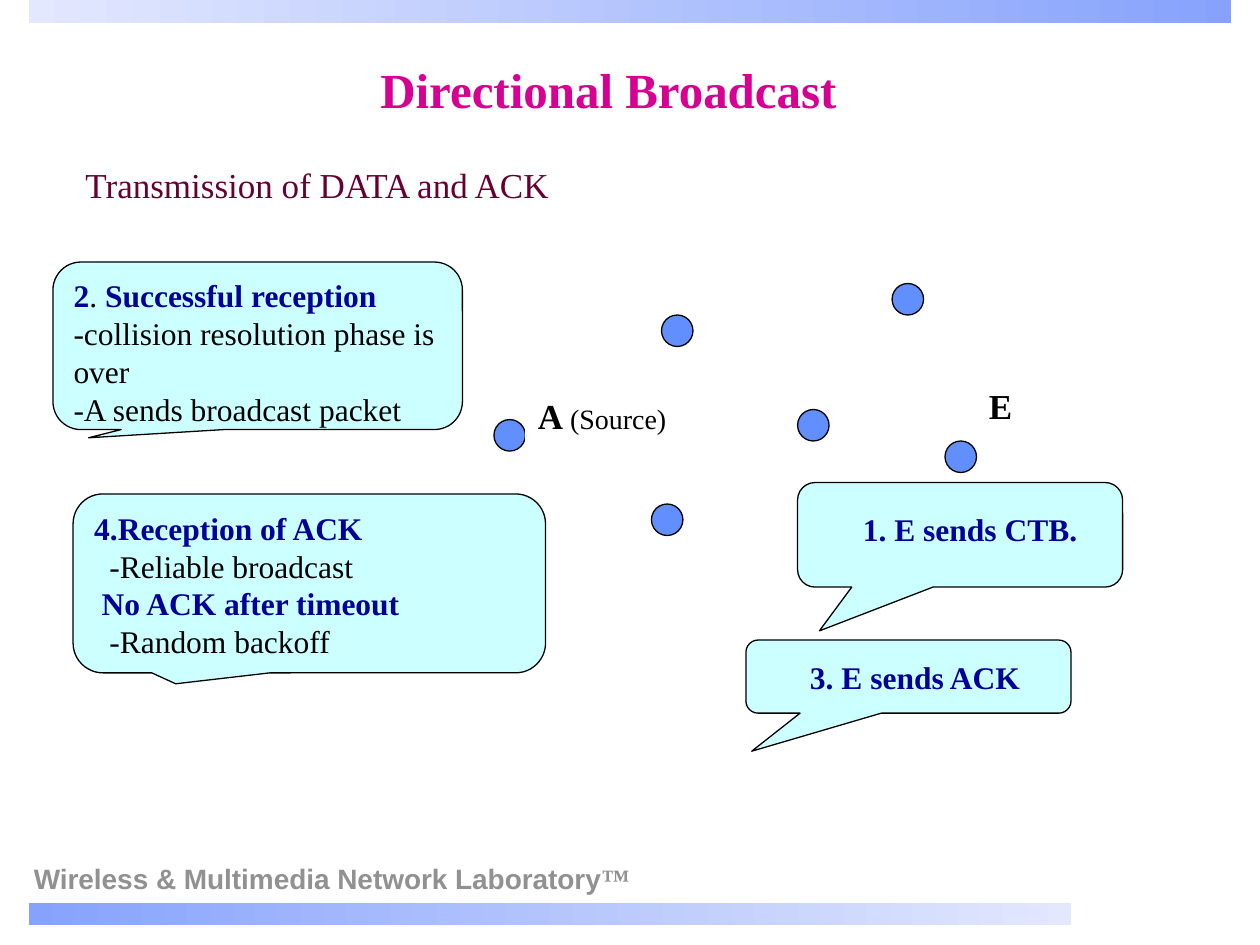
import pptx
import pptx.util
from pptx.dml.color import RGBColor
from pptx.enum.shapes import MSO_SHAPE
from pptx.enum.text import MSO_ANCHOR, MSO_AUTO_SIZE, PP_ALIGN
from pptx.util import Inches

BLACK = RGBColor(0x00, 0x00, 0x00)
WHITE = RGBColor(0xFF, 0xFF, 0xFF)
MAGENTA = RGBColor(0xD6, 0x00, 0x93)
MAROON = RGBColor(0x66, 0x00, 0x33)
NAVY = RGBColor(0x00, 0x00, 0x99)
GRAY = RGBColor(0x91, 0x91, 0x91)
CYAN = RGBColor(0xCC, 0xFF, 0xFF)
NODE_BLUE = RGBColor(0x61, 0x8F, 0xFD)
BAR_BLUE = RGBColor(0x86, 0xA2, 0xFC)
BAR_PALE = RGBColor(0xE3, 0xE8, 0xFE)

SERIF = "Times New Roman"
HEAD = {"name": SERIF, "size": 18, "bold": True, "color": NAVY}
BODY = {**HEAD, "bold": False, "color": BLACK}
NODE_NAME = {**HEAD, "size": 20, "color": BLACK}
TITLE = {**HEAD, "size": 28, "color": MAGENTA}
SUBTITLE = {**BODY, "size": 20, "color": MAROON}
FOOTER = {**HEAD, "name": "Arial", "size": 16, "color": GRAY}
NODE_SIZE = 0.25


class SlideBuilder:
    def __init__(self, slide):
        self.slide = slide

    def shape(self, kind, box, fill=None, line=BLACK):
        shape = self.slide.shapes.add_shape(kind, *map(Inches, box))
        shape.shadow.inherit = False
        if fill is None:
            shape.fill.background()
        else:
            shape.fill.solid()
            shape.fill.fore_color.rgb = fill
        shape.line.color.rgb = line
        shape.line.width = pptx.util.Pt(0.75)
        return shape

    def bar(self, box, colors):
        bar = self.shape(MSO_SHAPE.RECTANGLE, box)
        bar.line.fill.background()
        bar.fill.gradient()
        bar.fill.gradient_angle = 0
        for stop, color in zip(bar.fill.gradient_stops, colors):
            stop.color.rgb = color

    def node(self, left, top):
        self.shape(MSO_SHAPE.OVAL, (left, top, NODE_SIZE, NODE_SIZE), NODE_BLUE)

    def callout(self, box, tip, lines=()):
        callout = self.shape(MSO_SHAPE.ROUNDED_RECTANGULAR_CALLOUT, box, CYAN)
        for index, value in enumerate((*tip, 0.167)):
            callout.adjustments[index] = value
        self.fill_text(callout.text_frame, lines)

    def text(self, box, *runs, spacing=None):
        frame = self.slide.shapes.add_textbox(*map(Inches, box)).text_frame
        self.fill_text(frame, [(0, runs)], spacing)
        frame.auto_size = MSO_AUTO_SIZE.SHAPE_TO_FIT_TEXT

    def node_label(self, box, *runs):
        label = self.shape(MSO_SHAPE.RECTANGLE, box, line=WHITE)
        self.fill_text(label.text_frame, [(0, runs)])
        label.text_frame.auto_size = MSO_AUTO_SIZE.SHAPE_TO_FIT_TEXT

    def fill_text(self, frame, lines, spacing=None):
        """Fill a frame with lines, each an indent in inches and its (text, format) runs."""
        frame.word_wrap = True
        frame.vertical_anchor = MSO_ANCHOR.TOP
        for index, (indent, runs) in enumerate(lines):
            paragraph = frame.add_paragraph() if index else frame.paragraphs[0]
            paragraph.alignment = PP_ALIGN.LEFT
            if spacing:
                paragraph.line_spacing = spacing
            if indent:
                properties = paragraph._p.get_or_add_pPr()
                properties.set("marL", str(Inches(indent)))
                properties.set("indent", "0")
            for words, style in runs:
                run = paragraph.add_run()
                run.text = words
                for key, value in style.items():
                    if key == "color":
                        run.font.color.rgb = value
                    else:
                        setattr(run.font, key, pptx.util.Pt(value) if key == "size" else value)


def main():
    deck = pptx.Presentation()
    deck.slide_width, deck.slide_height = Inches(10), Inches(7.5)
    page = SlideBuilder(deck.slides.add_slide(deck.slide_layouts[6]))

    page.bar((0.23, 7.17, 8.27, 0.17), (BAR_BLUE, BAR_PALE))
    page.bar((0.23, 0, 9.54, 0.18), (BAR_PALE, BAR_BLUE))
    page.text((0.17, 6.82, 5, 0.34), ("Wireless & Multimedia Network Laboratory", FOOTER),
              ("™", {**FOOTER, "name": SERIF}), spacing=0.9)

    page.callout((5.92, 5.08, 2.58, 0.58), (-0.482, 1.021))
    page.callout((6.33, 3.83, 2.58, 0.83), (-0.433, 0.919))

    page.text((2.92, 0.42, 3.92, 0.57), ("Directional Broadcast", TITLE))
    page.text((0.58, 1.25, 4.08, 0.43), ("Transmission of DATA and ACK", SUBTITLE))

    for left, top in ((3.92, 3.33), (5.25, 2.5), (5.17, 4),
                      (7.08, 2.25), (6.33, 3.25), (7.5, 3.5)):
        page.node(left, top)

    page.text((6.75, 4, 1.92, 0.4), ("1. E sends CTB.", HEAD))
    page.text((6.33, 5.17, 2.08, 0.4), ("3. E sends ACK", HEAD))

    page.callout((0.42, 2.08, 3.25, 1.33), (-0.413, 0.549), [
        (0, [("2", HEAD), (". ", BODY), ("Successful reception", HEAD)]),
        (0, [("-collision resolution phase is over", BODY)]),
        (0, [("-A sends broadcast packet", BODY)]),
    ])
    page.callout((0.58, 3.92, 3.75, 1.42), (-0.283, 0.561), [
        (0, [("4.Reception of ACK", HEAD)]),
        (0.12, [("-Reliable broadcast", BODY)]),
        (0.06, [("No ACK after timeout", HEAD)]),
        (0.12, [("-Random backoff", BODY)]),
    ])

    page.node_label((4.17, 3.08, 1.25, 0.44), ("A", NODE_NAME),
                    (" (Source)", {**BODY, "size": 16}))
    page.node_label((7.75, 3, 0.42, 0.44), ("E", NODE_NAME))

    deck.save("out.pptx")


if __name__ == "__main__":
    main()
